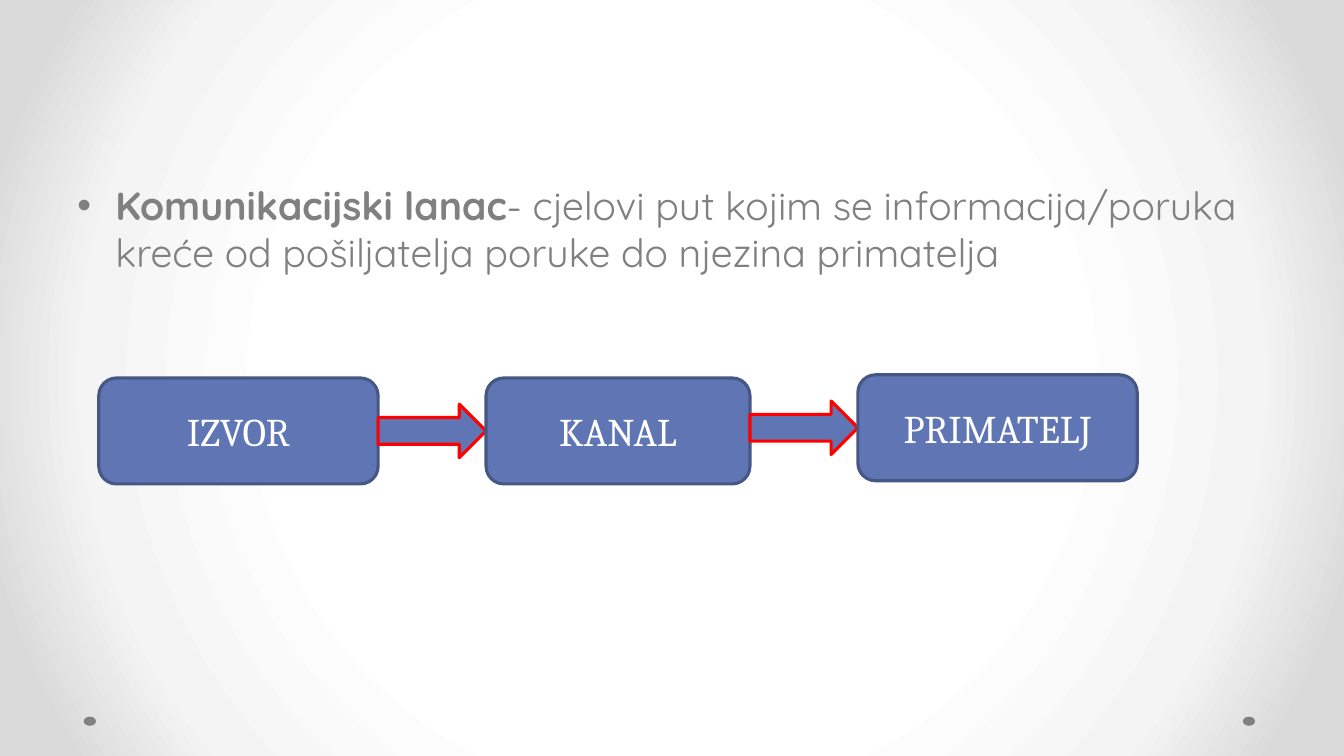
"""Build a slide showing the communication chain from source to recipient."""
from pptx import Presentation
from pptx.dml.color import RGBColor
from pptx.enum.shapes import MSO_SHAPE as SHAPE
from pptx.enum.text import MSO_ANCHOR as ANCHOR, PP_ALIGN as ALIGN
from pptx.oxml import parse_xml
from pptx.oxml.ns import nsdecls
from pptx.util import Cm, Pt

COLORS = {"text": "808080", "box": "6076B4", "edge": "475785",
          "arrow": "FF0000", "white": "FFFFFF"}
STOPS = [(0, "FFFFFF"), (50, "FFFFFF"), (76, "F4F4F4"), (92, "DADADA"), (100, "DADADA")]


def add_filled(kind, x, y, w, h, fill, line=None):
    sp = s.shapes.add_shape(kind, Cm(x), Cm(y), Cm(w), Cm(h))
    sp.shadow.inherit = False
    sp.fill.solid()
    sp.fill.fore_color.rgb = RGBColor.from_string(COLORS[fill])
    if line:
        sp.line.color.rgb = RGBColor.from_string(COLORS[line])
        sp.line.width = Pt(2.25)
    else:
        sp.line.fill.background()
    return sp


def add_run(p, text, color, **font):
    r = p.add_run()
    r.text = text
    r.font.color.rgb = RGBColor.from_string(COLORS[color])
    for name, value in font.items():
        setattr(r.font, name, value)


prs = Presentation()
prs.slide_width, prs.slide_height = Cm(33.87), Cm(19.05)
s = prs.slides.add_slide(prs.slide_layouts[6])

s.background.fill.gradient()
grad = s.element.xpath(".//p:bgPr/a:gradFill")[0]
stops = "".join(f'<a:gs pos="{pos * 1000}"><a:srgbClr val="{color}"/></a:gs>'
                for pos, color in STOPS)
grad.getparent().replace(grad, parse_xml(
    f'<a:gradFill {nsdecls("a")} rotWithShape="1"><a:gsLst>{stops}</a:gsLst>'
    '<a:path path="circle"><a:fillToRect l="50000" t="50000" r="50000" b="50000"/>'
    '</a:path></a:gradFill>'))

for x in (31.32, 2.11):
    add_filled(SHAPE.OVAL, x, 18.06, 0.31, 0.23, "text")

tf = s.shapes.add_textbox(Cm(1.7), Cm(4.45), Cm(30.48), Cm(12.57)).text_frame
tf.word_wrap = True
p = tf.paragraphs[0]
p.space_before = Pt(5.6)
pPr = p._p.get_or_add_pPr()
pPr.set("marL", str(Cm(0.96)))
pPr.set("indent", str(Cm(-0.96)))
pPr.append(parse_xml(f'<a:buFont {nsdecls("a")} typeface="Arial"/>'))
pPr.append(parse_xml(f'<a:buChar {nsdecls("a")} char="•"/>'))
body = {"size": Pt(28), "name": "Quicksand"}
add_run(p, "Komunikacijski lanac", "text", bold=True, **body)
add_run(p, "- cjelovi put kojim se informacija/poruka kreće od pošiljatelja "
        "poruke do njezina primatelja", "text", bold=False, **body)

BOX_H, ARROW_W, ARROW_H = 2.67, 2.72, 1.35
CHAIN = [("IZVOR", 7.04, 10.86), ("KANAL", 6.65, 10.86), ("PRIMATELJ", 7.04, 10.78)]
x = 2.49
for i, (label, width, middle) in enumerate(CHAIN):
    if i:
        add_filled(SHAPE.RIGHT_ARROW, x, middle - ARROW_H / 2, ARROW_W, ARROW_H,
                   "box", "arrow")
        x += ARROW_W
    sp = add_filled(SHAPE.FLOWCHART_ALTERNATE_PROCESS, x, middle - BOX_H / 2,
                    width, BOX_H, "box", "edge")
    sp.text_frame.vertical_anchor = ANCHOR.MIDDLE
    p = sp.text_frame.paragraphs[0]
    p.alignment = ALIGN.CENTER
    add_run(p, label, "white", size=Pt(28), name="Cambria")
    x += width

prs.save("out.pptx")
